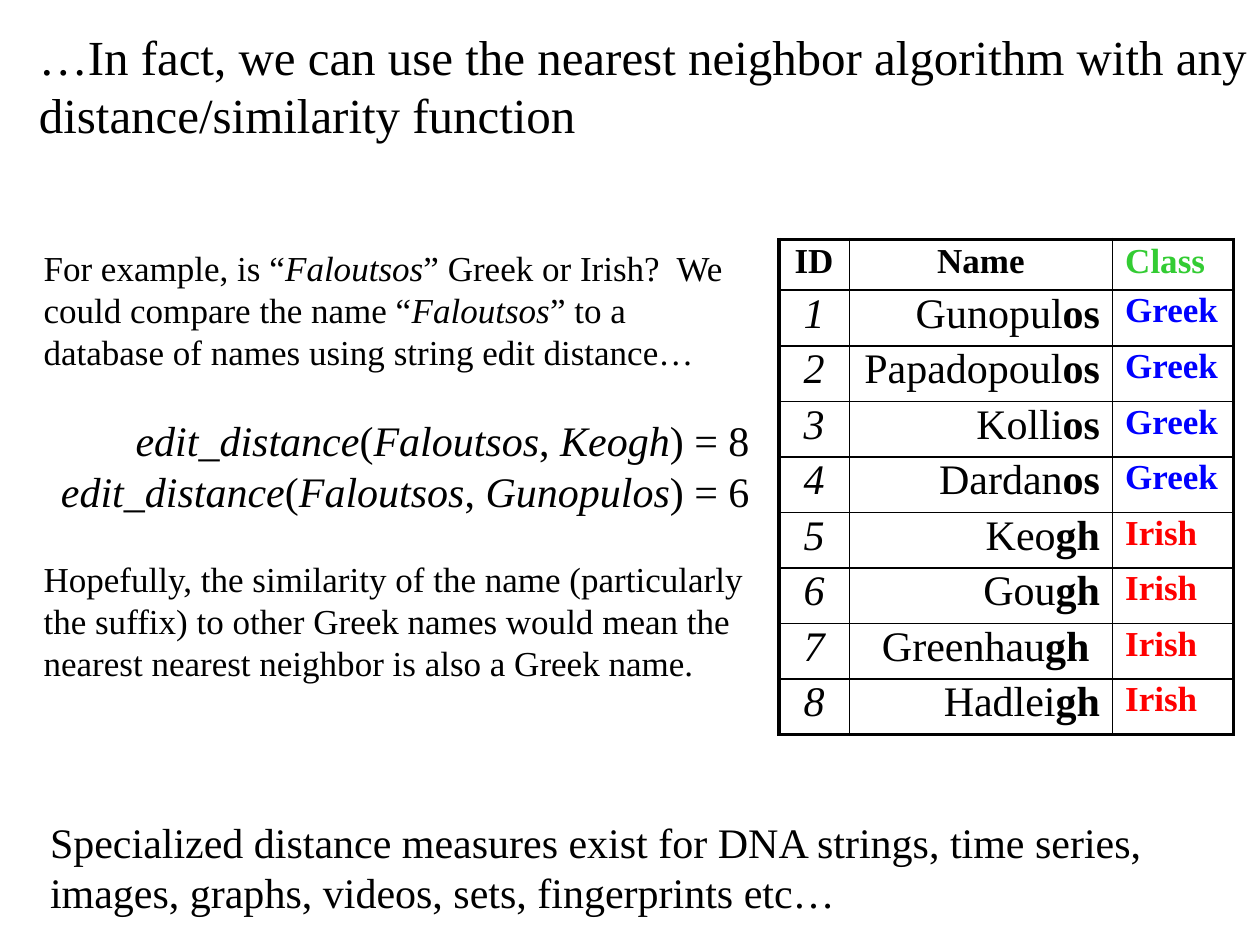
"""Build a slide on nearest neighbor classification with edit distance."""
import pptx
import pptx.dml.color
import pptx.enum.text
import pptx.oxml
import pptx.oxml.ns
import pptx.util

Cm, Pt = pptx.util.Cm, pptx.util.Pt
RGB = pptx.dml.color.RGBColor
ALIGN = pptx.enum.text.PP_ALIGN
LEFT, MID, RIGHT = ALIGN.LEFT, ALIGN.CENTER, ALIGN.RIGHT

BLACK = RGB(0, 0, 0)
GREEN = RGB(0x33, 0xCC, 0x33)
BLUE = RGB(0, 0, 0xFF)
RED = RGB(0xFF, 0, 0)
FONT = "Times New Roman"
THIN, THICK = 1, 2.25

TITLE = "…In fact, we can use the nearest neighbor algorithm with any distance/similarity function"
BODY = [
    ("For example, is “*Faloutsos*” Greek or Irish?  We could compare the name "
     "“*Faloutsos*” to a database of names using string edit distance…", 20, LEFT, 0),
    ("*edit_distance*(*Faloutsos*, *Keogh*) = 8", 24, RIGHT, 24),
    ("*edit_distance*(*Faloutsos*, *Gunopulos*) = 6", 24, RIGHT, 0),
    ("Hopefully, the similarity of the name (particularly the suffix) to other Greek "
     "names would mean the nearest nearest neighbor is also a Greek name.", 20, LEFT, 24),
]
CLOSE = ("Specialized distance measures exist for DNA strings, time series, "
         "images, graphs, videos, sets, fingerprints etc…")
HEAD = [("ID", MID, BLACK), ("Name", MID, BLACK), ("Class", LEFT, GREEN)]
PEOPLE = [
    ("Gunopul", "os", "Greek"), ("Papadopoul", "os", "Greek"),
    ("Kolli", "os", "Greek"), ("Dardan", "os", "Greek"),
    ("Keo", "gh", "Irish"), ("Gou", "gh", "Irish"),
    ("Greenhau", "gh ", "Irish"), ("Hadlei", "gh", "Irish"),
]
HUES = {"Greek": BLUE, "Irish": RED}
WIDTHS = [1.42, 5.31, 2.44]
TOP_ROW, ROW = 1.02, 1.12


def add_run(para, text, size, color=BLACK, bold=False, italic=False):
    run = para.add_run()
    run.text = text
    font = run.font
    font.name, font.size, font.bold, font.italic = FONT, Pt(size), bold, italic
    font.color.rgb = color


def add_box(slide, left, top, width, height):
    box = slide.shapes.add_textbox(Cm(left), Cm(top), Cm(width), Cm(height))
    box.text_frame.word_wrap = True
    return box.text_frame


def fill_cell(cell, align, space, runs):
    para = cell.text_frame.paragraphs[0]
    para.alignment, para.line_spacing = align, space
    for text, size, color, bold, italic in runs:
        add_run(para, text, size, color, bold, italic)


def edge_cell(cell, row, col, rows, cols):
    props = cell._tc.get_or_add_tcPr()
    outer = {"lnL": col == 0, "lnR": col == cols - 1,
             "lnT": row == 0, "lnB": row == rows - 1}
    for tag, thick in outer.items():
        width = Pt(THICK if thick else THIN)
        props.append(pptx.oxml.parse_xml(
            f'<a:{tag} {pptx.oxml.ns.nsdecls("a")} w="{width}"><a:solidFill>'
            f'<a:srgbClr val="{BLACK}"/></a:solidFill></a:{tag}>'))
    cell.fill.background()


def add_names(slide):
    rows, cols = len(PEOPLE) + 1, len(HEAD)
    frame = slide.shapes.add_table(rows, cols, Cm(15.7), Cm(4.83), Cm(sum(WIDTHS)),
                                   Cm(TOP_ROW + ROW * len(PEOPLE)))
    table = frame.table
    table.first_row = table.horz_banding = False
    for col, width in zip(table.columns, WIDTHS):
        col.width = Cm(width)
    for num, row in enumerate(table.rows):
        row.height = Cm(ROW if num else TOP_ROW)
    for col, (text, align, color) in enumerate(HEAD):
        fill_cell(table.cell(0, col), align, 0.9, [(text, 20, color, True, False)])
    for num, (stem, end, group) in enumerate(PEOPLE, 1):
        fill_cell(table.cell(num, 0), MID, 0.85, [(str(num), 24, BLACK, False, True)])
        fill_cell(table.cell(num, 1), RIGHT, 0.85,
                  [(stem, 24, BLACK, False, False), (end, 24, BLACK, True, False)])
        fill_cell(table.cell(num, 2), LEFT, 0.85,
                  [(group, 20, HUES[group], True, False)])
    for row in range(rows):
        for col in range(cols):
            edge_cell(table.cell(row, col), row, col, rows, cols)


def add_title(slide):
    title = slide.shapes.title
    title.left, title.top, title.width, title.height = Cm(0.53), Cm(0.4), Cm(24.87), Cm(2.62)
    frame = title.text_frame
    frame.word_wrap = True
    frame.auto_size = pptx.enum.text.MSO_AUTO_SIZE.NONE
    frame.vertical_anchor = pptx.enum.text.MSO_ANCHOR.TOP
    para = frame.paragraphs[0]
    para.alignment = LEFT
    add_run(para, TITLE, 28)


def add_body(slide):
    frame = add_box(slide, 0.63, 4.85, 14.73, 10.08)
    for num, (text, size, align, gap) in enumerate(BODY):
        para = frame.add_paragraph() if num else frame.paragraphs[0]
        para.alignment, para.space_before = align, Pt(gap)
        for part, words in enumerate(text.split("*")):
            if words:
                add_run(para, words, size, italic=part % 2 == 1)


def main():
    deck = pptx.Presentation()
    deck.slide_width, deck.slide_height = Cm(25.4), Cm(19.05)
    slide = deck.slides.add_slide(deck.slide_layouts[5])
    add_title(slide)
    add_names(slide)
    add_body(slide)
    add_run(add_box(slide, 0.76, 16.33, 24.13, 2.29).paragraphs[0], CLOSE, 24)
    deck.save("out.pptx")


if __name__ == "__main__":
    main()
